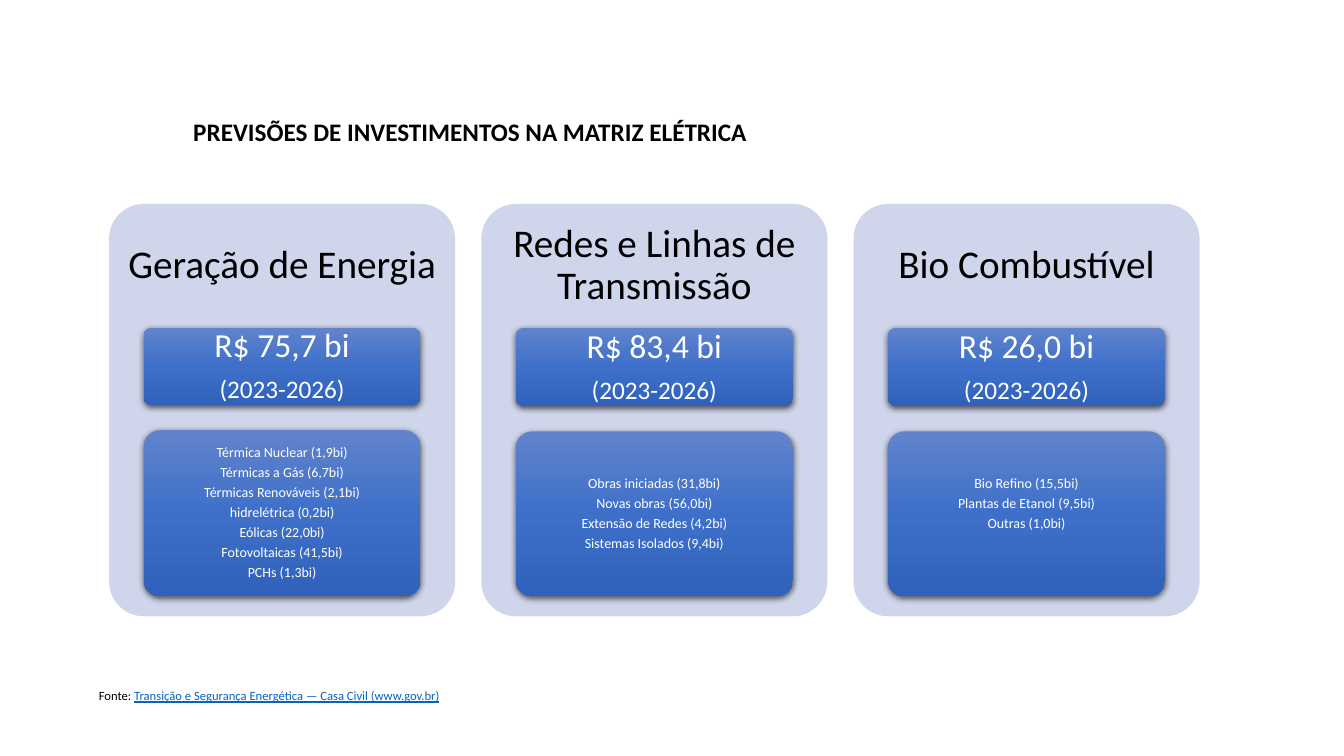
import pptx
import pptx.util
import pptx.dml.color
import pptx.enum.shapes
import pptx.enum.text
import pptx.oxml
import pptx.oxml.ns

Cm, Pt = pptx.util.Cm, pptx.util.Pt
ALIGN = pptx.enum.text.PP_ALIGN
ANCHOR = pptx.enum.text.MSO_ANCHOR

# Content
TITLE = "PREVISÕES DE INVESTIMENTOS NA MATRIZ ELÉTRICA"
PERIOD = "(2023-2026)"
SOURCE = ("Fonte: ", "Transição e Segurança Energética — Casa Civil (www.gov.br)")
# Heading, total, height of the total box, room below the items, items
CARDS = [
    ("Geração de Energia", "R$ 75,7 bi", 1.94, 0.05, [
        "Térmica Nuclear (1,9bi)", "Térmicas a Gás (6,7bi)",
        "Térmicas Renováveis (2,1bi)", "hidrelétrica (0,2bi)",
        "Eólicas (22,0bi)", "Fotovoltaicas (41,5bi)", "PCHs (1,3bi)"]),
    ("Redes e Linhas de Transmissão", "R$ 83,4 bi", 1.97, 0.05, [
        "Obras iniciadas (31,8bi)", "Novas obras (56,0bi)",
        "Extensão de Redes (4,2bi)", "Sistemas Isolados (9,4bi)"]),
    ("Bio Combustível", "R$ 26,0 bi", 1.97, 0.55, [
        "Bio Refino (15,5bi)", "Plantas de Etanol (9,5bi)", "Outras (1,0bi)"]),
]
COLORS = {"black": "000000", "white": "FFFFFF", "card": "CFD5EA", "link": "0563C1",
          "light": "6183CB", "middle": "3E70CA", "dark": "3062BB"}

# Layout in centimetres
CARD_LEFT, CARD_TOP, CARD_WIDTH, CARD_HEIGHT, CARD_PITCH = 2.75, 5.14, 8.72, 10.39, 9.38
HEADING_HEIGHT = 3.12
BOX_WIDTH, BOX_GAP, BOX_BOTTOM = 6.98, 0.64, 15.03
BOX_INDENT = (CARD_WIDTH - BOX_WIDTH) / 2
BOX_TOP = CARD_TOP + HEADING_HEIGHT


def rgb(name):
    return pptx.dml.color.RGBColor.from_string(COLORS[name])


def apply(target, values):
    for name, value in values.items():
        setattr(target, name, value)


def format_font(font, size, color, **extra):
    apply(font, {"name": "Calibri", "size": Pt(size), **extra})
    font.color.rgb = rgb(color)


def format_frame(frame, insets, anchor):
    left, top, right, bottom = (Cm(inset) for inset in insets)
    apply(frame, {"word_wrap": True, "vertical_anchor": anchor, "margin_left": left,
                  "margin_top": top, "margin_right": right, "margin_bottom": bottom})


def write_lines(frame, lines, color):
    """Centred paragraphs from (text, size) pairs, spaced by 35% of the size."""
    for index, (text, size) in enumerate(lines):
        paragraph = frame.add_paragraph() if index else frame.paragraphs[0]
        paragraph.text = text
        apply(paragraph, {"alignment": ALIGN.CENTER, "line_spacing": 0.9,
                          "space_after": Pt(size * 0.35)})
        format_font(paragraph.font, size, color)


def add_rounded(slide, left, top, width, height):
    shape = slide.shapes.add_shape(pptx.enum.shapes.MSO_SHAPE.ROUNDED_RECTANGLE,
                                   Cm(left), Cm(top), Cm(width), Cm(height))
    shape.adjustments[0] = 0.1
    shape.shadow.inherit = False
    shape.line.fill.background()
    return shape


def add_box(slide, left, top, height, lines, insets):
    shape = add_rounded(slide, left, top, BOX_WIDTH, height)
    namespace = pptx.oxml.ns.nsdecls("a")
    stops = "".join(
        f'<a:gs pos="{position}"><a:srgbClr val="{COLORS[name]}"/></a:gs>'
        for position, name in ((0, "light"), (50000, "middle"), (100000, "dark")))
    properties = shape.element.spPr
    # Vertical gradient goes just before the outline
    properties.find(pptx.oxml.ns.qn("a:ln")).addprevious(pptx.oxml.parse_xml(
        f'<a:gradFill {namespace} rotWithShape="1"><a:gsLst>{stops}</a:gsLst>'
        '<a:lin ang="5400000" scaled="0"/></a:gradFill>'))
    # Soft shadow below the box
    properties.find(pptx.oxml.ns.qn("a:effectLst")).append(pptx.oxml.parse_xml(
        f'<a:outerShdw {namespace} blurRad="{Pt(4.5)}" dist="{Pt(1.5)}" dir="5400000" '
        f'algn="ctr" rotWithShape="0"><a:srgbClr val="{COLORS["black"]}">'
        '<a:alpha val="63000"/></a:srgbClr></a:outerShdw>'))
    format_frame(shape.text_frame, insets, ANCHOR.MIDDLE)
    write_lines(shape.text_frame, lines, "white")


def add_card(slide, left, heading, total, total_height, room_below, items):
    card = add_rounded(slide, left, CARD_TOP, CARD_WIDTH, CARD_HEIGHT)
    card.fill.solid()
    card.fill.fore_color.rgb = rgb("card")
    heading_box = slide.shapes.add_textbox(Cm(left), Cm(CARD_TOP),
                                           Cm(CARD_WIDTH), Cm(HEADING_HEIGHT))
    format_frame(heading_box.text_frame, (0.3, 0.3, 0.3, 0.3), ANCHOR.MIDDLE)
    write_lines(heading_box.text_frame, [(heading, 28)], "black")

    box_left = left + BOX_INDENT
    add_box(slide, box_left, BOX_TOP, total_height,
            [(total, 24), (PERIOD, 18)], (0.18, 0.13, 0.18, 0.13))
    items_top = BOX_TOP + total_height + BOX_GAP
    add_box(slide, box_left, items_top, BOX_BOTTOM - items_top,
            [(item, 10) for item in items], (0.08, 0.05, 0.08, room_below))


def main():
    presentation = pptx.Presentation()
    apply(presentation, {"slide_width": Cm(33.87), "slide_height": Cm(19.05)})
    slide = presentation.slides.add_slide(presentation.slide_layouts[5])

    # Title
    title = slide.shapes.title
    apply(title, {"left": Cm(4.62), "top": Cm(2.8), "width": Cm(15.67), "height": Cm(1.03)})
    title.text_frame.text = TITLE
    format_frame(title.text_frame, (0.25, 0.13, 0.25, 0.13), ANCHOR.TOP)
    title.text_frame.paragraphs[0].alignment = ALIGN.LEFT
    format_font(title.text_frame.paragraphs[0].font, 18, "black", bold=True)

    # Investment cards
    for index, card in enumerate(CARDS):
        add_card(slide, CARD_LEFT + index * CARD_PITCH, *card)

    # Source line
    source = slide.shapes.add_textbox(Cm(1.88), Cm(17.25), Cm(9.8), Cm(0.61))
    format_frame(source.text_frame, (0.25, 0.13, 0.25, 0.13), ANCHOR.BOTTOM)
    paragraph = source.text_frame.paragraphs[0]
    apply(paragraph, {"alignment": ALIGN.CENTER, "line_spacing": 0.9, "space_after": Pt(5.5)})
    for text, color, underline in zip(SOURCE, ("black", "link"), (False, True)):
        run = paragraph.add_run()
        run.text = text
        format_font(run.font, 9, color, underline=underline)

    presentation.save("out.pptx")


if __name__ == "__main__":
    main()
